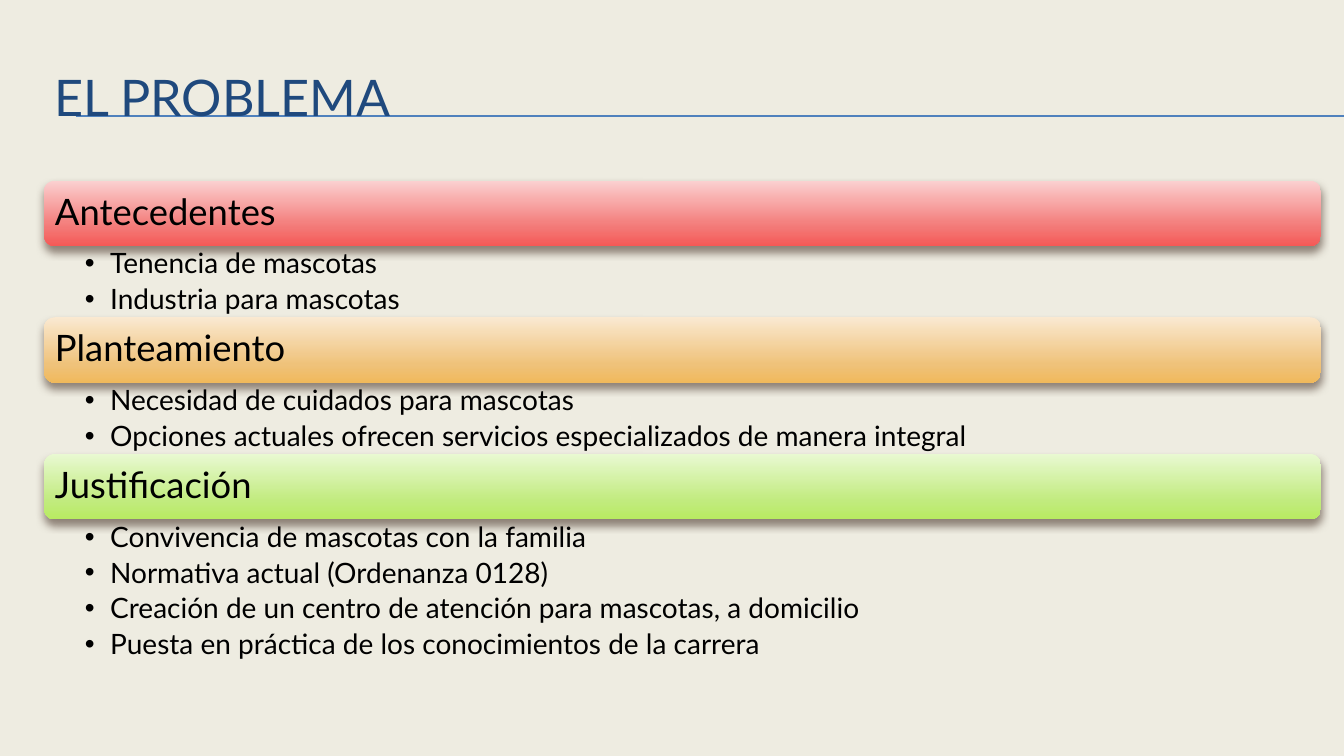
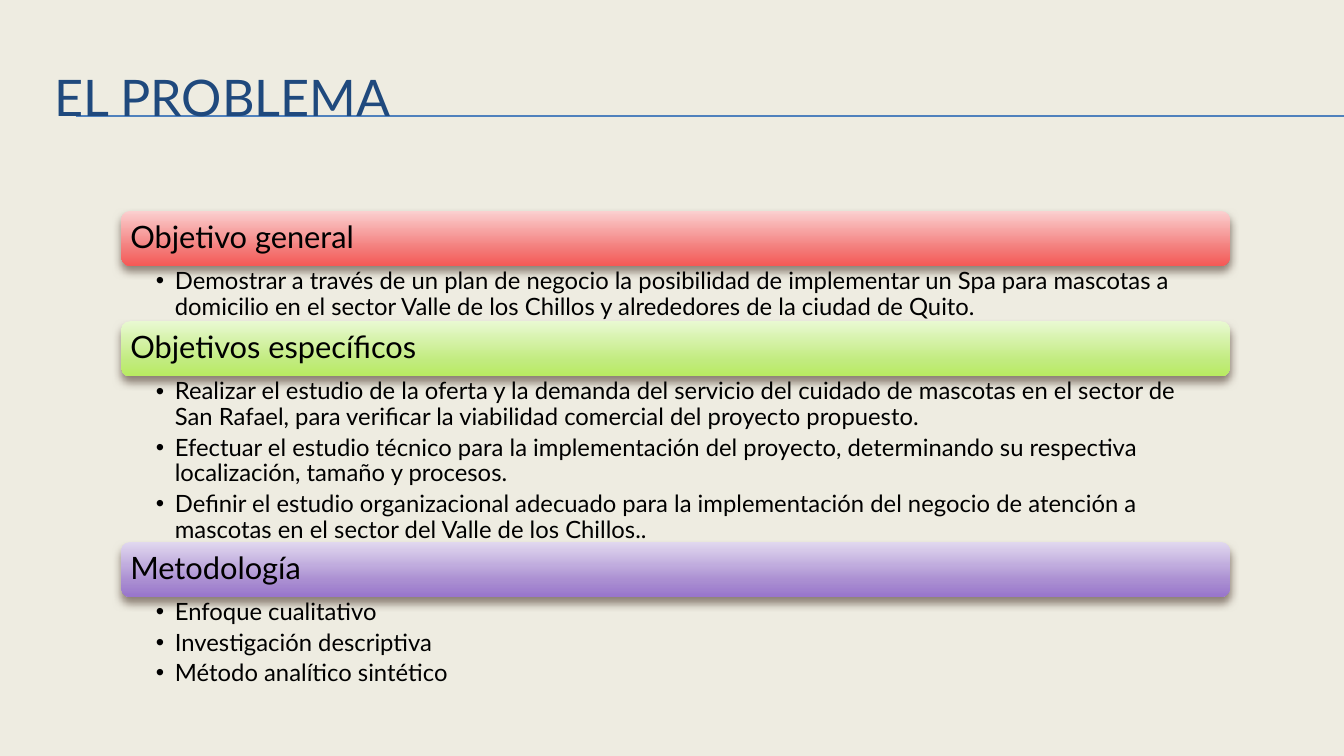
"""Build two slides that outline the problem, the objectives and the method."""
from lxml import etree
from pptx import Presentation
from pptx.dml.color import RGBColor
from pptx.enum.shapes import MSO_CONNECTOR, MSO_SHAPE
from pptx.enum.text import MSO_ANCHOR, PP_ALIGN
from pptx.oxml.ns import qn
from pptx.util import Pt

STRAIGHT = MSO_CONNECTOR.STRAIGHT
ROUNDED = MSO_SHAPE.ROUNDED_RECTANGLE
MIDDLE, TOP = MSO_ANCHOR.MIDDLE, MSO_ANCHOR.TOP
LEFT = PP_ALIGN.LEFT

SLIDE_WIDTH, SLIDE_HEIGHT = 960, 540
TITLE_ONLY = 5
FONT = "Lato"
COLOURS = {
    "background": "EEECE1",
    "title": "1F497D",
    "rule": "4F81BD",
    "text": "000000",
    "shadow": "4E3B30",
}
STOPS = (0, 72, 100)
BANDS = {
    "red": ("FBD0D0", "F37876", "F55956"),
    "orange": ("FAE9D1", "EFC27A", "F0B95C"),
    "green": ("E9F9D2", "C1EB7E", "B8EB61"),
    "purple": ("E1D8EF", "A98DD1", "9875CB"),
}
CORNER_INSET = 0.05

WIDE = {"left": 31.5, "top": 129, "width": 912, "band": 46.8,
        "heading": 26, "body": 20, "indent": 18}
NARROW = {"left": 86.6, "top": 150.6, "width": 792, "band": 39.4,
          "heading": 22, "body": 17, "indent": 13.5}

PAGES = [
    ("EL PROBLEMA", WIDE, [
        ("Antecedentes", "red", 50.8, [
            "Tenencia de mascotas",
            "Industria para mascotas"]),
        ("Planteamiento", "orange", 50.8, [
            "Necesidad de cuidados para mascotas",
            "Opciones actuales ofrecen servicios especializados de manera integral"]),
        ("Justificación", "green", 101.5, [
            "Convivencia de mascotas con la familia",
            "Normativa actual (Ordenanza 0128)",
            "Creación de un centro de atención para mascotas, a domicilio",
            "Puesta en práctica de los conocimientos de la carrera"]),
    ]),
    ("EL PROBLEMA", NARROW, [
        ("Objetivo general", "red", 39.4, [
            "Demostrar a través de un plan de negocio la posibilidad de implementar un Spa "
            "para mascotas a domicilio en el sector Valle de los Chillos y alrededores de "
            "la ciudad de Quito."]),
        ("Objetivos específicos", "green", 118.3, [
            "Realizar el estudio de la oferta y la demanda del servicio del cuidado de "
            "mascotas en el sector de San Rafael, para verificar la viabilidad comercial "
            "del proyecto propuesto.",
            "Efectuar el estudio técnico para la implementación del proyecto, determinando "
            "su respectiva localización, tamaño y procesos.",
            "Definir el estudio organizacional adecuado para la implementación del negocio "
            "de atención a mascotas en el sector del Valle de los Chillos.."]),
        ("Metodología", "purple", 64.8, [
            "Enfoque cualitativo",
            "Investigación descriptiva",
            "Método analítico sintético"]),
    ]),
]


def assign(target, **values):
    """Set every given attribute on the target."""
    for name, value in values.items():
        setattr(target, name, value)


def add_node(parent, tag, **attributes):
    """Append a drawing element and return it."""
    node = etree.SubElement(parent, qn(tag))
    for name, value in attributes.items():
        node.set(name, str(value))
    return node


class Sheet:
    """Hold the deck style and the current page."""

    def __init__(self):
        """Set up the deck, its background and its title position."""
        self.deck = Presentation()
        assign(self.deck, slide_width=Pt(SLIDE_WIDTH), slide_height=Pt(SLIDE_HEIGHT))
        self.layout = self.deck.slide_layouts[TITLE_ONLY]
        fill = self.deck.slide_master.background.fill
        fill.solid()
        fill.fore_color.rgb = RGBColor.from_string(COLOURS["background"])
        assign(self.layout.placeholders[0], left=Pt(31.5), top=Pt(36),
               width=Pt(912), height=Pt(66))
        self.page = None

    def start_page(self, title):
        """Add a page with its title."""
        self.page = self.deck.slides.add_slide(self.layout)
        frame = self.page.shapes.title.text_frame
        frame.vertical_anchor = MIDDLE
        self.add_text(frame.paragraphs[0], title, 36, "title")

    def add_text(self, para, text, size, colour="text", **formats):
        """Put one styled span into a paragraph."""
        assign(para, alignment=LEFT, **formats)
        span = para.add_run()
        span.text = text
        assign(span.font, name=FONT, size=Pt(size))
        span.font.color.rgb = RGBColor.from_string(COLOURS[colour])

    def layout_rule(self, height):
        """Draw a rule and keep it in the layout behind every title."""
        rule = self.page.shapes.add_connector(
            STRAIGHT, Pt(54), Pt(height), Pt(SLIDE_WIDTH), Pt(height))
        rule.line.width = Pt(0.75)
        rule.line.color.rgb = RGBColor.from_string(COLOURS["rule"])
        add_node(rule.element.spPr, "a:effectLst")
        self.layout.shapes.element.append(rule.element)

    def shade(self, box, colours):
        """Give a box a vertical gradient and a soft shadow."""
        box.fill.gradient()
        box.fill.gradient_angle = 270
        box.line.fill.background()
        box.shadow.inherit = False
        properties = box.element.spPr
        stops = properties.find(qn("a:gradFill")).find(qn("a:gsLst"))
        for stop in list(stops):
            stops.remove(stop)
        for position, colour in zip(STOPS, colours):
            stop = add_node(stops, "a:gs", pos=position * 1000)
            add_node(stop, "a:srgbClr", val=colour)
        shadow = add_node(properties.find(qn("a:effectLst")), "a:outerShdw",
                          blurRad=Pt(6), dist=Pt(4), dir=90 * 60000, rotWithShape=0)
        tint = add_node(shadow, "a:srgbClr", val=COLOURS["shadow"])
        add_node(tint, "a:alpha", val=60000)

    def band(self, text, colours, top, form):
        """Draw a heading band."""
        box = self.page.shapes.add_shape(
            ROUNDED, Pt(form["left"]), Pt(top), Pt(form["width"]), Pt(form["band"]))
        self.shade(box, colours)
        inset = Pt(0.3 * form["heading"] - CORNER_INSET * form["band"])
        assign(box.text_frame, word_wrap=True, vertical_anchor=MIDDLE, margin_left=inset,
               margin_right=inset, margin_top=inset, margin_bottom=inset)
        self.add_text(box.text_frame.paragraphs[0], text, form["heading"], line_spacing=0.9)

    def bullets(self, items, top, height, form):
        """Draw a bulleted list."""
        box = self.page.shapes.add_textbox(
            Pt(form["left"]), Pt(top), Pt(form["width"]), Pt(height))
        frame, size = box.text_frame, form["body"]
        assign(frame, word_wrap=True, vertical_anchor=TOP,
               margin_left=Pt(form["width"] * 0.03), margin_right=Pt(size * 0.71),
               margin_top=Pt(size * 0.13), margin_bottom=Pt(size * 0.13))
        frame.margin_left = Pt(form["body"] * 1.46)
        for index, item in enumerate(items):
            para = frame.add_paragraph() if index else frame.paragraphs[0]
            properties = para._p.get_or_add_pPr()
            properties.set("marL", str(Pt(form["indent"])))
            properties.set("indent", str(-Pt(form["indent"])))
            add_node(properties, "a:buFont", typeface="Arial")
            add_node(properties, "a:buChar", char="•")
            self.add_text(para, item, size, line_spacing=0.9, space_after=Pt(size * 0.2))

    def sections(self, parts, form):
        """Stack bands and their lists from the top down."""
        top = form["top"]
        for heading, colour, height, items in parts:
            self.band(heading, BANDS[colour], top, form)
            top += form["band"]
            self.bullets(items, top, height, form)
            top += height


def main():
    """Build and save the deck."""
    sheet = Sheet()
    for title, form, parts in PAGES:
        sheet.start_page(title)
        sheet.sections(parts, form)
    for height in (82.8, 83.5):
        sheet.layout_rule(height)
    sheet.deck.save("out.pptx")


if __name__ == "__main__":
    main()
